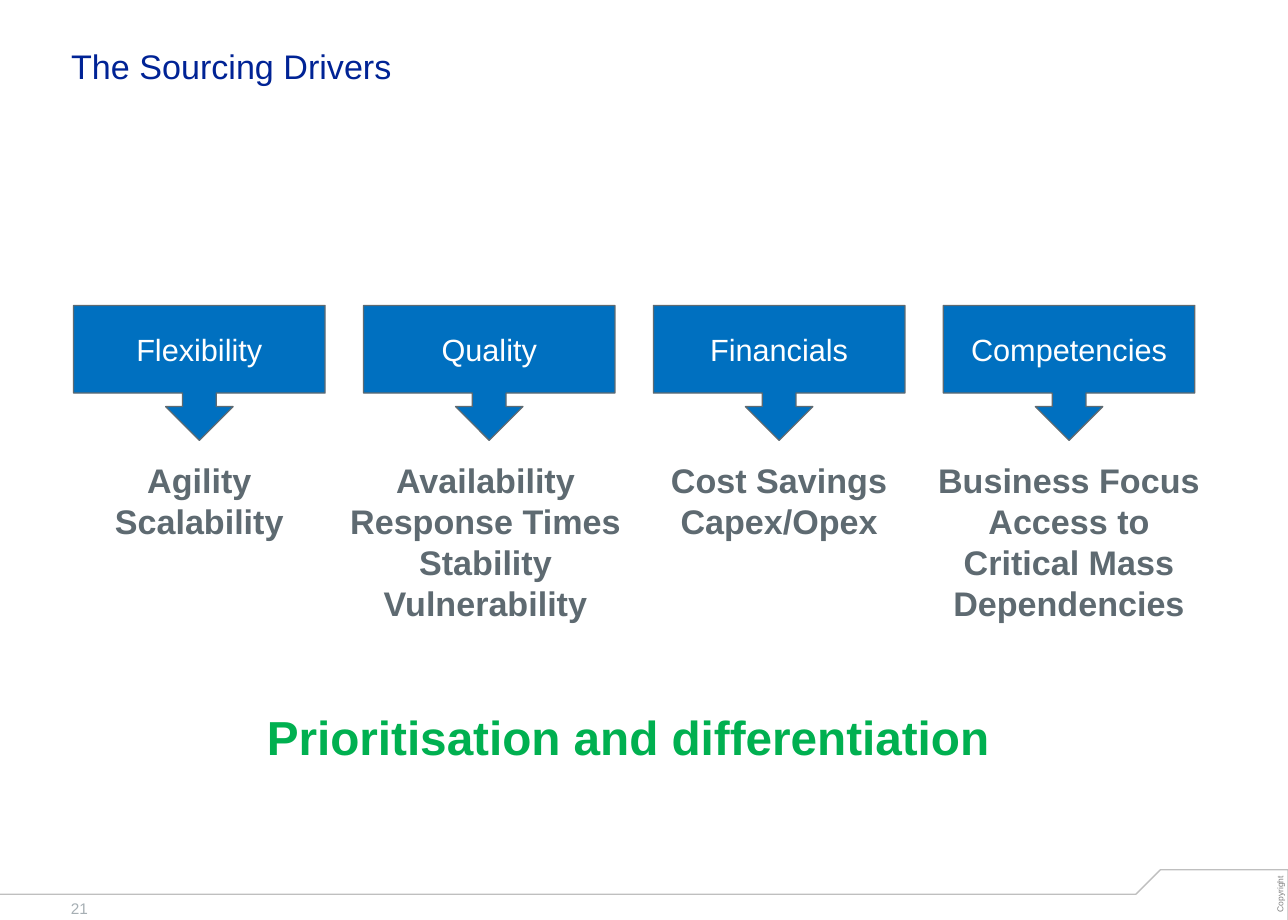
import pptx
import pptx.util
import pptx.dml.color
import pptx.enum.shapes
import pptx.enum.text

Inches = pptx.util.Inches
ALIGN = pptx.enum.text.PP_ALIGN
ANCHOR = pptx.enum.text.MSO_ANCHOR

COLORS = {"title": "002395", "driver": "0070C0", "slate": "5E6A71", "goal": "00B050",
          "white": "FFFFFF", "rule": "BFBFBF", "copyright": "808080", "number": "A6AFB4"}
# Each driver: shift of its details from the column's centre, and the details
DRIVERS = {
    "Flexibility": (0, ["Agility", "Scalability"]),
    "Quality": (-0.03, ["Availability", "Response Times", "Stability", "Vulnerability"]),
    "Financials": (0, ["Cost Savings", "Capex/Opex"]),
    "Competencies": (0, ["Business Focus", "Access to", "Critical Mass", "Dependencies"]),
}
WIDTH, HEIGHT = 10.5, 7.5
COLUMN_LEFT, LAST_COLUMN_LEFT = 0.6, 7.69
COLUMN_STEP = (LAST_COLUMN_LEFT - COLUMN_LEFT) / (len(DRIVERS) - 1)
DRIVER_TOP, DRIVER_WIDTH, DRIVER_HEIGHT = 2.49, 2.05, 1.1
DETAIL_TOP, DETAIL_WIDTH, DETAIL_HEIGHT = 3.7, 2.31, 1.54


def rgb(name):
    return pptx.dml.color.RGBColor.from_string(COLORS[name])


def write(shape, lines, size, color, bold=False, align=ALIGN.CENTER,
          anchor=ANCHOR.TOP, wrap=True, **margins):
    """Fill a shape with one paragraph per line, all in the same format."""
    frame = shape.text_frame
    frame.text = "\n".join(lines)
    settings = {"word_wrap": wrap, "vertical_anchor": anchor, **margins}
    for setting, value in settings.items():
        setattr(frame, setting, value)
    font_format = {"name": "Arial", "size": pptx.util.Pt(size), "bold": bold}
    for paragraph in frame.paragraphs:
        paragraph.alignment = align
        for setting, value in font_format.items():
            setattr(paragraph.font, setting, value)
        paragraph.font.color.rgb = rgb(color)


deck = pptx.Presentation()
deck.slide_width, deck.slide_height = Inches(WIDTH), Inches(HEIGHT)
slide = deck.slides.add_slide(deck.slide_layouts[5])
shapes = slide.shapes
no_side_margins = {"margin_left": 0, "margin_right": 0}
no_margins = {**no_side_margins, "margin_top": 0, "margin_bottom": 0}

# Footer
footer_points = [(9.26, 7.29), (9.46, 7.09), (WIDTH, 7.09), (WIDTH, 7.51), (-0.01, 7.51)]
outline = shapes.build_freeform(Inches(-0.01), Inches(7.29))
outline.add_line_segments([(Inches(x), Inches(y)) for x, y in footer_points], close=True)
footer = outline.convert_to_shape()
footer.shadow.inherit = False
footer.fill.solid()
footer.fill.fore_color.rgb = rgb("white")
footer.line.color.rgb = rgb("rule")
footer.line.width = pptx.util.Pt(0.75)

copyright_mark = shapes.add_textbox(Inches(10.23), Inches(7.23), Inches(0.41), Inches(0.12))
copyright_mark.rotation = 270
write(copyright_mark, ["Copyright"], 5, "copyright", anchor=ANCHOR.MIDDLE, wrap=False,
      **no_margins)

page_number = shapes.add_textbox(Inches(0.48), Inches(7.28), Inches(0.39), Inches(0.25))
write(page_number, ["21"], 9, "number", align=ALIGN.LEFT)

# Title
title = shapes.title
title.left, title.top, title.width, title.height = map(Inches, (0.48, 0.2, 9.77, 0.5))
write(title, ["The Sourcing Drivers"], 20, "title", align=ALIGN.LEFT, anchor=ANCHOR.BOTTOM,
      **{**no_margins, "margin_left": Inches(0.1)})

# Drivers with their details
for column, (driver, (shift, details)) in enumerate(DRIVERS.items()):
    left = COLUMN_LEFT + column * COLUMN_STEP
    callout = shapes.add_shape(
        pptx.enum.shapes.MSO_SHAPE.DOWN_ARROW_CALLOUT,
        Inches(left), Inches(DRIVER_TOP), Inches(DRIVER_WIDTH), Inches(DRIVER_HEIGHT))
    callout.shadow.inherit = False
    callout.fill.solid()
    callout.fill.fore_color.rgb = rgb("driver")
    callout.line.color.rgb = rgb("slate")
    callout.line.width = pptx.util.Pt(0.75)
    write(callout, [driver], 18, "white", anchor=ANCHOR.MIDDLE)

    detail_left = left + (DRIVER_WIDTH - DETAIL_WIDTH) / 2 + shift
    detail_box = shapes.add_textbox(Inches(detail_left), Inches(DETAIL_TOP),
                                    Inches(DETAIL_WIDTH), Inches(DETAIL_HEIGHT))
    write(detail_box, details, 20, "slate", bold=True, **no_side_margins)

# Conclusion
conclusion = shapes.add_textbox(Inches(2.02), Inches(5.72), Inches(6.2), Inches(0.71))
write(conclusion, ["Prioritisation and differentiation"], 28, "goal", bold=True,
      **no_side_margins)

deck.save("out.pptx")
